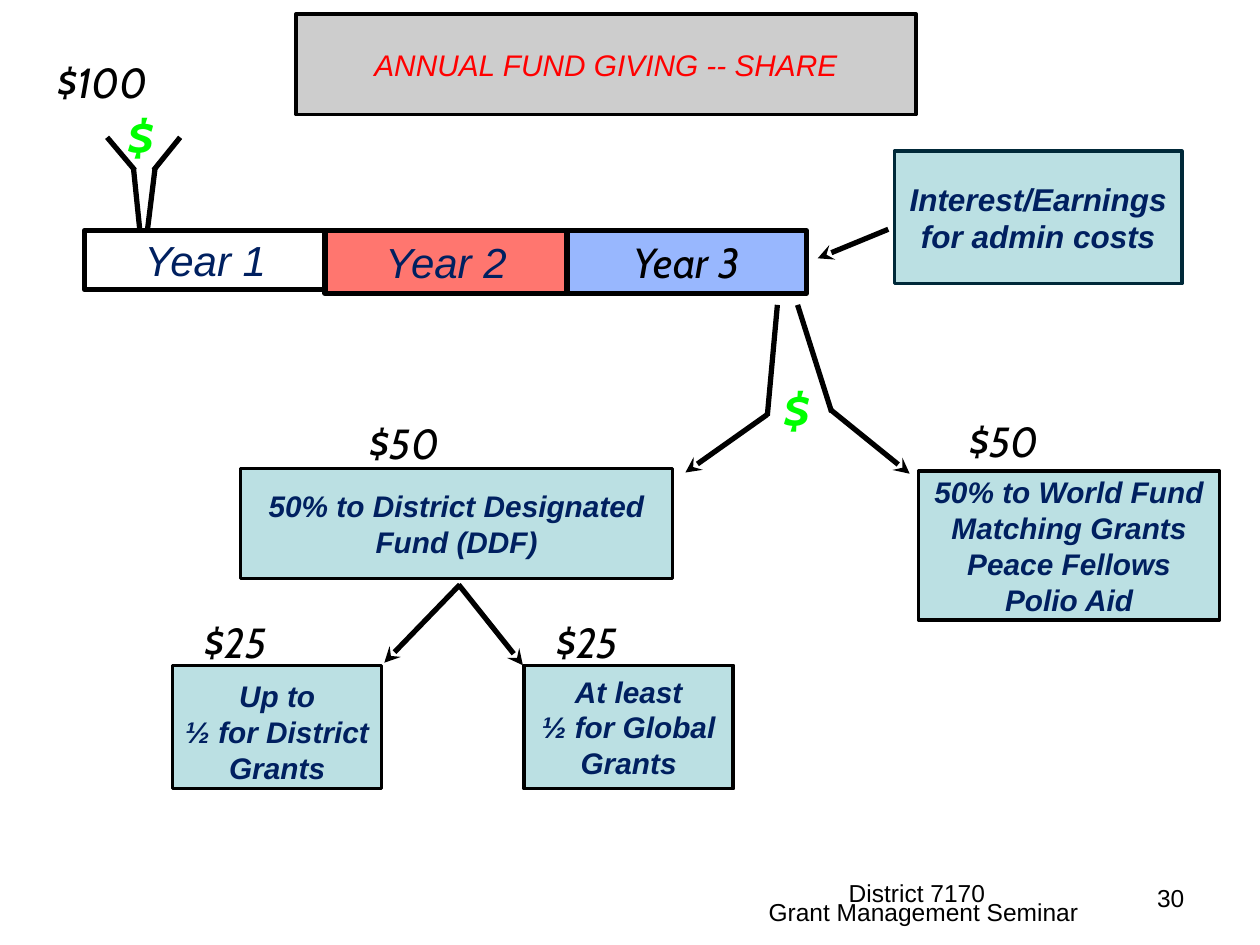
"""Build the annual fund giving flow slide."""
from dataclasses import dataclass

from lxml import etree
from pptx import Presentation
from pptx.dml.color import RGBColor
from pptx.enum.shapes import MSO_CONNECTOR, MSO_SHAPE
from pptx.enum.text import MSO_ANCHOR, PP_ALIGN
from pptx.oxml.ns import qn
from pptx.util import Emu, Pt

STRAIGHT = MSO_CONNECTOR.STRAIGHT
RECTANGLE = MSO_SHAPE.RECTANGLE
MIDDLE = MSO_ANCHOR.MIDDLE
CENTER, RIGHT = PP_ALIGN.CENTER, PP_ALIGN.RIGHT
EMU_PER_PX = 9144
BLACK, NAVY, GREEN, RED = "000000", "002060", "00FF00", "FF0000"
PALE_TEAL, GREY, CORAL, BLUE, WHITE = "BBE0E3", "CDCDCD", "FF766F", "98B7FE", "FFFFFF"


@dataclass(frozen=True)
class TextStyle:
    """Font settings of one block of text."""
    size: int
    color: str = NAVY
    font: str = "Arial"
    bold: bool = False
    italic: bool = True


@dataclass(frozen=True)
class Box:
    """A filled and outlined rectangle with text."""
    left: int
    top: int
    width: int
    height: int
    text: str
    style: TextStyle
    fill: str = PALE_TEAL
    line: str = BLACK
    line_width: int = 2
    top_inset: int = 0


@dataclass(frozen=True)
class Label:
    """Free-standing text."""
    left: int
    top: int
    width: int
    height: int
    text: str
    style: TextStyle
    align: PP_ALIGN = CENTER


@dataclass(frozen=True)
class Segment:
    """A straight line, with an optional arrowhead at its end."""
    x1: int
    y1: int
    x2: int
    y2: int
    arrow: bool = False


FUND = TextStyle(17, bold=True)
YEAR = TextStyle(24)
AMOUNT = TextStyle(24, BLACK, "Cabin")
DOLLAR = TextStyle(30, GREEN, "Cabin", bold=True)
FOOTER = TextStyle(14, BLACK, italic=False)

TITLE = Box(235, 11, 492, 80, "ANNUAL FUND GIVING -- SHARE", TextStyle(17, RED), GREY)
BOXES = [
    Box(710, 120, 228, 105, "Interest/Earnings for admin costs",
        TextStyle(18, bold=True), line="002939"),
    Box(729, 374, 239, 118,
        "50% to World Fund\nMatching Grants\nPeace Fellows\nPolio Aid", FUND),
    Box(191, 372, 343, 87, "50% to District Designated Fund (DDF)", FUND),
    Box(137, 528, 166, 98, "Up to\n½ for District Grants", FUND, top_inset=7),
    Box(416, 528, 166, 98, "At least\n½ for Global Grants", FUND),
    Box(67, 183, 192, 47, "Year 1", YEAR, WHITE, line_width=3),
    Box(258, 183, 192, 50, "Year 2", YEAR, CORAL, line_width=3),
    Box(450, 183, 190, 50, "Year 3", AMOUNT, BLUE, line_width=3),
]
LABELS = [
    Label(44, 45, 75, 40, "$100", AMOUNT),
    Label(100, 83, 23, 50, "$", DOLLAR),
    Label(621, 300, 23, 50, "$", DOLLAR),
    Label(293, 331, 56, 40, "$50", AMOUNT),
    Label(769, 330, 56, 40, "$50", AMOUNT),
    Label(159, 489, 56, 40, "$25", AMOUNT),
    Label(438, 489, 56, 40, "$25", AMOUNT),
    Label(558, 696, 224, 25, "District 7170", FOOTER, RIGHT),
    Label(558, 707, 350, 33, "Grant Management Seminar", FOOTER),
    Label(717, 699, 223, 27, "30", FOOTER, RIGHT),
]
SEGMENTS = [
    Segment(85, 109, 107, 135),
    Segment(106, 134, 111, 183),
    Segment(143, 109, 122, 135),
    Segment(123, 134, 117, 183),
    Segment(705, 182, 649, 205, True),
    Segment(617, 242, 609, 330),
    Segment(609, 329, 544, 375, True),
    Segment(633, 242, 660, 327),
    Segment(659, 325, 722, 376, True),
    Segment(365, 464, 305, 526, True),
    Segment(364, 464, 415, 528, True),
]


def px(value: int) -> Emu:
    """Turn slide pixels into EMU."""
    return Emu(value * EMU_PER_PX)


def rgb(color: str) -> RGBColor:
    """Turn a hex string into a colour."""
    return RGBColor.from_string(color)


def write_text(shape, text: str, style: TextStyle, align=CENTER, top_inset: int = 0) -> None:
    """Fill a shape with evenly formatted text."""
    frame = shape.text_frame
    frame.text = text
    frame.vertical_anchor = MIDDLE
    frame.margin_left = frame.margin_right = frame.margin_bottom = 0
    frame.margin_top = px(top_inset)
    for paragraph in frame.paragraphs:
        paragraph.alignment = align
        for run in paragraph.runs:
            font = run.font
            font.name, font.size = style.font, Pt(style.size)
            font.bold, font.italic = style.bold, style.italic
            font.color.rgb = rgb(style.color)


def format_box(shape, box: Box) -> None:
    """Apply fill, outline and text to a shape."""
    shape.fill.solid()
    shape.fill.fore_color.rgb = rgb(box.fill)
    shape.line.color.rgb = rgb(box.line)
    shape.line.width = Pt(box.line_width)
    shape.text_frame.word_wrap = True
    write_text(shape, box.text, box.style, top_inset=box.top_inset)


def place_title(slide, box: Box) -> None:
    """Move and format the title placeholder."""
    title = slide.shapes.title
    title.left, title.top = px(box.left), px(box.top)
    title.width, title.height = px(box.width), px(box.height)
    format_box(title, box)


def add_box(slide, box: Box) -> None:
    """Draw a text rectangle."""
    shape = slide.shapes.add_shape(
        RECTANGLE, px(box.left), px(box.top), px(box.width), px(box.height))
    shape.shadow.inherit = False
    format_box(shape, box)


def add_label(slide, label: Label) -> None:
    """Draw a text box without wrapping."""
    shape = slide.shapes.add_textbox(
        px(label.left), px(label.top), px(label.width), px(label.height))
    shape.text_frame.word_wrap = False
    write_text(shape, label.text, label.style, label.align)


def add_segment(slide, segment: Segment) -> None:
    """Draw a straight line or arrow."""
    connector = slide.shapes.add_connector(
        STRAIGHT, px(segment.x1), px(segment.y1), px(segment.x2), px(segment.y2))
    connector.line.color.rgb = rgb(BLACK)
    connector.line.width = Pt(3)
    if segment.arrow:
        etree.SubElement(connector.line._get_or_add_ln(), qn("a:tailEnd"), type="stealth")
    etree.SubElement(connector._element.spPr, qn("a:effectLst"))


def main() -> None:
    """Build and save the presentation."""
    presentation = Presentation()
    presentation.slide_width, presentation.slide_height = px(1000), px(750)
    slide = presentation.slides.add_slide(presentation.slide_layouts[5])
    place_title(slide, TITLE)
    for segment in SEGMENTS:
        add_segment(slide, segment)
    for box in BOXES:
        add_box(slide, box)
    for label in LABELS:
        add_label(slide, label)
    presentation.save("out.pptx")


if __name__ == "__main__":
    main()
